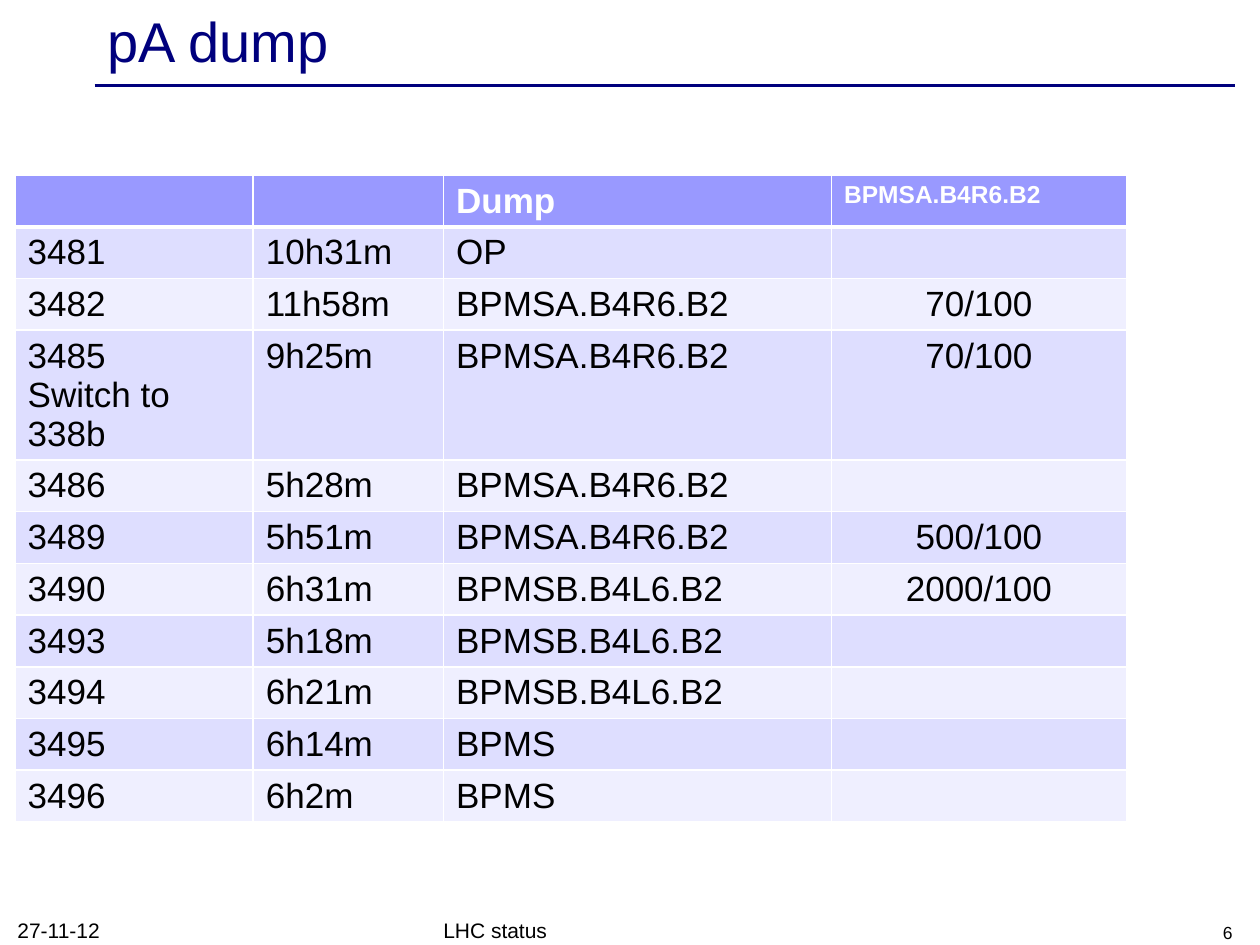
from lxml.etree import SubElement
from pptx import Presentation
from pptx.dml.color import RGBColor
from pptx.enum.shapes import MSO_CONNECTOR
from pptx.enum.text import MSO_ANCHOR, PP_ALIGN
from pptx.oxml.ns import qn
from pptx.util import Inches, Pt

COLORS = {
    "navy": "00007D",
    "header": "9999FF",
    "odd": "DEDEFF",
    "even": "EFEFFF",
    "white": "FFFFFF",
    "black": "000000",
}
GRID_COLUMNS, GRID_ROWS = 100, 75
COLUMN_WIDTHS = [18.9, 15.1, 30.8, 23.4]
ROW_HEIGHT = 4.1
HEADER = ["", "", "Dump", "BPMSA.B4R6.B2"]
FILLS = [
    ["3481", "10h31m", "OP", ""],
    ["3482", "11h58m", "BPMSA.B4R6.B2", "70/100"],
    ["3485\nSwitch to 338b", "9h25m", "BPMSA.B4R6.B2", "70/100"],
    ["3486", "5h28m", "BPMSA.B4R6.B2", ""],
    ["3489", "5h51m", "BPMSA.B4R6.B2", "500/100"],
    ["3490", "6h31m", "BPMSB.B4L6.B2", "2000/100"],
    ["3493", "5h18m", "BPMSB.B4L6.B2", ""],
    ["3494", "6h21m", "BPMSB.B4L6.B2", ""],
    ["3495", "6h14m", "BPMS", ""],
    ["3496", "6h2m", "BPMS", ""],
]


class SlideBuilder:
    def __init__(self):
        self.deck = Presentation()
        self.deck.slide_width, self.deck.slide_height = Inches(10), Inches(7.5)
        self.page = self.deck.slides.add_slide(self.deck.slide_layouts[5])

    def across(self, columns):
        return round(self.deck.slide_width * columns / GRID_COLUMNS)

    def down(self, rows):
        return round(self.deck.slide_height * rows / GRID_ROWS)

    def area(self, left, top, width, height):
        return self.across(left), self.down(top), self.across(width), self.down(height)

    def set_text(self, frame, text, size, color="black", align=PP_ALIGN.LEFT, **extra):
        frame.text = text
        values = {"name": "Arial", "size": Pt(size), **extra}
        for para in frame.paragraphs:
            para.alignment = align
            for span in para.runs:
                for key, value in values.items():
                    setattr(span.font, key, value)
                span.font.color.rgb = RGBColor.from_string(COLORS[color])

    def title(self, text, area):
        box = self.page.shapes.title
        for key, value in zip(("left", "top", "width", "height"), self.area(*area)):
            setattr(box, key, value)
        box.text_frame.vertical_anchor = MSO_ANCHOR.MIDDLE
        self.set_text(box.text_frame, text, 32, "navy")

    def rule(self, left, right, top):
        line = self.page.shapes.add_connector(
            MSO_CONNECTOR.STRAIGHT,
            self.across(left), self.down(top), self.across(right), self.down(top),
        )
        line.line.color.rgb = RGBColor.from_string(COLORS["navy"])
        line.line.width = Pt(2)
        SubElement(line._element.spPr, qn("a:effectLst"))

    def text(self, text, area, size=12, align=PP_ALIGN.LEFT):
        box = self.page.shapes.add_textbox(*self.area(*area))
        box.text_frame.word_wrap = True
        box.text_frame.vertical_anchor = MSO_ANCHOR.BOTTOM
        self.set_text(box.text_frame, text, size, align=align)

    def style_cell(self, cell, fill, bottom):
        properties = cell._tc.get_or_add_tcPr()
        for side, width in {"L": 1, "R": 1, "T": 1, "B": bottom}.items():
            border = SubElement(properties, qn(f"a:ln{side}"), w=str(Pt(width)))
            solid = SubElement(border, qn("a:solidFill"))
            SubElement(solid, qn("a:srgbClr"), val=COLORS["white"])
        cell.fill.solid()
        cell.fill.fore_color.rgb = RGBColor.from_string(COLORS[fill])

    def table(self, left, top):
        records = [HEADER, *FILLS]
        area = self.area(left, top, sum(COLUMN_WIDTHS), ROW_HEIGHT * len(records))
        table = self.page.shapes.add_table(len(records), len(HEADER), *area).table
        table.horz_banding = False
        for column, width in zip(table.columns, COLUMN_WIDTHS):
            column.width = self.across(width)
        for row, record in enumerate(records):
            table.rows[row].height = self.down(ROW_HEIGHT)
            for column, value in enumerate(record):
                cell = table.cell(row, column)
                last = column == len(HEADER) - 1
                if row == 0:
                    self.style_cell(cell, "header", 3)
                    size = 14 if last else 20
                    self.set_text(cell.text_frame, value, size, "white", bold=True)
                else:
                    self.style_cell(cell, "odd" if row % 2 else "even", 1)
                    align = PP_ALIGN.CENTER if last else PP_ALIGN.LEFT
                    self.set_text(cell.text_frame, value, 20, align=align, bold=False)


def main():
    builder = SlideBuilder()
    builder.rule(7.5, 98, 6.8)
    builder.title("pA dump", (7.5, 0.3, 90, 5.7))
    builder.table(1.2, 13.9)
    builder.text("27-11-12", (0.4, 72.4, 23.3, 2.9))
    builder.text("LHC status", (34.2, 72.5, 31.7, 2.8))
    builder.text("6", (75.5, 72.5, 23.3, 2.8), size=10, align=PP_ALIGN.RIGHT)
    builder.deck.save("out.pptx")


if __name__ == "__main__":
    main()
